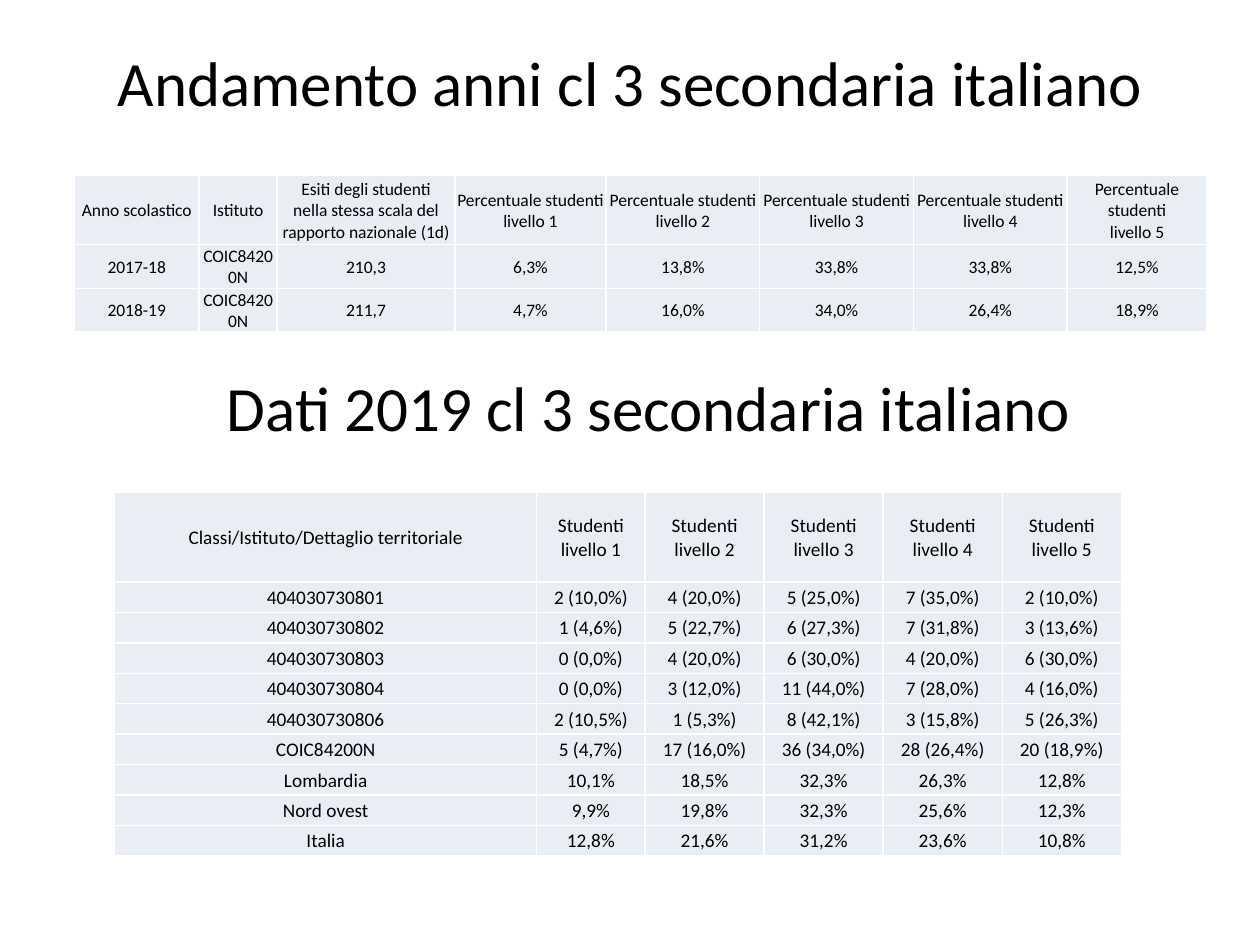
import lxml.etree
import pptx
import pptx.dml.color
import pptx.enum.text
import pptx.oxml.ns
import pptx.util

WIDTH, HEIGHT = 10, 7.5
FONT = "Calibri"
COLOURS = {"text": "000000", "cell": "E9EDF4", "border": "FFFFFF"}

TREND_HEADER = [
    "Anno scolastico",
    "Istituto",
    "Esiti degli studenti\nnella stessa scala del\nrapporto nazionale (1d)",
] + [f"Percentuale studenti\nlivello {level}" for level in range(1, 6)]
TREND_ROWS = [
    ["2017-18", "COIC84200N", "210,3", "6,3%", "13,8%", "33,8%", "33,8%", "12,5%"],
    ["2018-19", "COIC84200N", "211,7", "4,7%", "16,0%", "34,0%", "26,4%", "18,9%"],
]

LEVEL_HEADER = ["Classi/Istituto/Dettaglio territoriale"] + [
    f"Studenti\nlivello {level}" for level in range(1, 6)
]
LEVEL_ROWS = [
    ["404030730801", "2 (10,0%)", "4 (20,0%)", "5 (25,0%)", "7 (35,0%)", "2 (10,0%)"],
    ["404030730802", "1 (4,6%)", "5 (22,7%)", "6 (27,3%)", "7 (31,8%)", "3 (13,6%)"],
    ["404030730803", "0 (0,0%)", "4 (20,0%)", "6 (30,0%)", "4 (20,0%)", "6 (30,0%)"],
    ["404030730804", "0 (0,0%)", "3 (12,0%)", "11 (44,0%)", "7 (28,0%)", "4 (16,0%)"],
    ["404030730806", "2 (10,5%)", "1 (5,3%)", "8 (42,1%)", "3 (15,8%)", "5 (26,3%)"],
    ["COIC84200N", "5 (4,7%)", "17 (16,0%)", "36 (34,0%)", "28 (26,4%)", "20 (18,9%)"],
    ["Lombardia", "10,1%", "18,5%", "32,3%", "26,3%", "12,8%"],
    ["Nord ovest", "9,9%", "19,8%", "32,3%", "25,6%", "12,3%"],
    ["Italia", "12,8%", "21,6%", "31,2%", "23,6%", "10,8%"],
]


def across(percent):
    return pptx.util.Inches(WIDTH * percent / 100)


def down(percent):
    return pptx.util.Inches(HEIGHT * percent / 100)


def colour(name):
    return pptx.dml.color.RGBColor.from_string(COLOURS[name])


def write_centred(frame, text, size):
    frame.word_wrap = True
    frame.vertical_anchor = pptx.enum.text.MSO_ANCHOR.MIDDLE
    para = frame.paragraphs[0]
    para.alignment = pptx.enum.text.PP_ALIGN.CENTER
    for number, line in enumerate(text.split("\n")):
        if number:
            para.add_line_break()
        span = para.add_run()
        span.text = line
        span.font.name = FONT
        span.font.size = pptx.util.Pt(size)
        span.font.color.rgb = colour("text")


def write_heading(box, left, top, text):
    box.left, box.top = across(left), down(top)
    box.width, box.height = across(90), down(9.2)
    box.text_frame.auto_size = pptx.enum.text.MSO_AUTO_SIZE.NONE
    write_centred(box.text_frame, text, 36)


def add_borders(cell):
    properties = cell._tc.get_or_add_tcPr()
    qn = pptx.oxml.ns.qn
    for side in ("a:lnL", "a:lnR", "a:lnT", "a:lnB"):
        line = lxml.etree.SubElement(properties, qn(side), w=str(pptx.util.Pt(1)))
        fill = lxml.etree.SubElement(line, qn("a:solidFill"))
        lxml.etree.SubElement(fill, qn("a:srgbClr"), val=COLOURS["border"])


def format_cell(cell, text, size):
    inset = pptx.util.Inches(0.01)
    cell.margin_left = cell.margin_right = cell.margin_top = inset
    cell.margin_bottom = 0
    cell.vertical_anchor = pptx.enum.text.MSO_ANCHOR.MIDDLE
    add_borders(cell)
    cell.fill.solid()
    cell.fill.fore_color.rgb = colour("cell")
    write_centred(cell.text_frame, text, size)


def add_data_table(page, left, top, widths, header_height, row_height, rows, size):
    height = header_height + row_height * (len(rows) - 1)
    table = page.shapes.add_table(
        len(rows), len(widths), across(left), down(top), across(sum(widths)), down(height)
    ).table
    table.first_row = table.horz_banding = False
    for column, width in zip(table.columns, widths):
        column.width = across(width)
    for number, texts in enumerate(rows):
        table.rows[number].height = down(row_height if number else header_height)
        for cell, text in zip(table.rows[number].cells, texts):
            format_cell(cell, text, size)


def main():
    deck = pptx.Presentation()
    deck.slide_width, deck.slide_height = across(100), down(100)
    page = deck.slides.add_slide(deck.slide_layouts[5])

    write_heading(page.shapes.title, 5, 4, "Andamento anni cl 3 secondaria italiano")
    trend_widths = [9.9, 6.2, 14.1, 12] + [12.2] * 3 + [11.1]
    add_data_table(page, 5.9, 18.6, trend_widths, 7.3, 4.4, [TREND_HEADER] + TREND_ROWS, 10)
    level_widths = [33.5, 8.6] + [9.45] * 4
    add_data_table(page, 9.1, 52.1, level_widths, 9.5, 3.22, [LEVEL_HEADER] + LEVEL_ROWS, 11)
    subtitle = page.shapes.add_textbox(0, 0, across(90), down(9.2))
    write_heading(subtitle, 6.5, 38.4, "Dati 2019 cl 3 secondaria italiano")

    deck.save("out.pptx")


if __name__ == "__main__":
    main()
